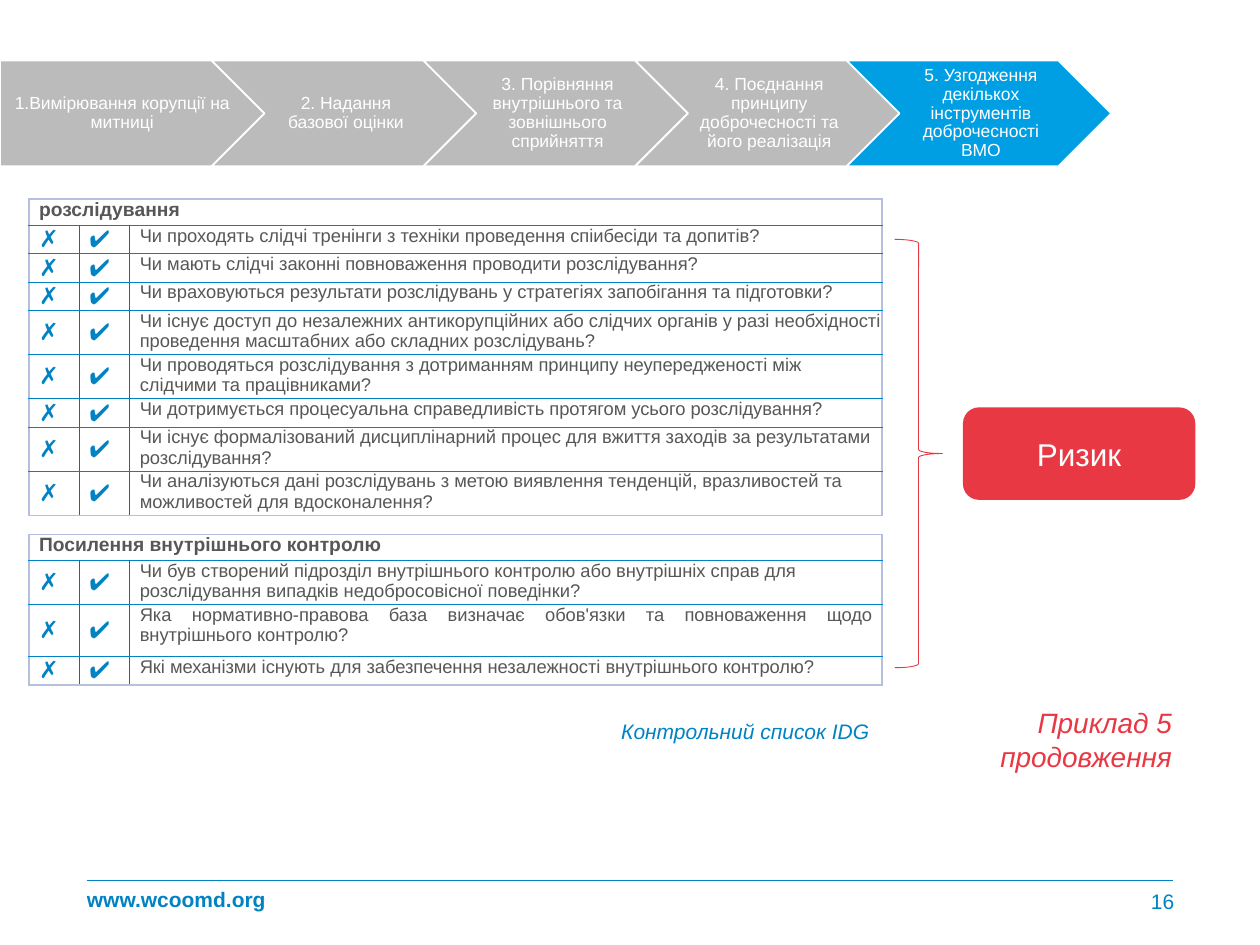
"""Build the integrity checklist slide with its process chevrons and risk callout."""
from dataclasses import dataclass

from lxml import etree
from pptx import Presentation
from pptx.dml.color import RGBColor
from pptx.enum.shapes import MSO_CONNECTOR, MSO_SHAPE
from pptx.enum.text import MSO_ANCHOR, PP_ALIGN
from pptx.oxml.ns import qn
from pptx.util import Inches, Pt

LEFT, CENTER, RIGHT, JUSTIFY = PP_ALIGN.LEFT, PP_ALIGN.CENTER, PP_ALIGN.RIGHT, PP_ALIGN.JUSTIFY
TOP, MIDDLE = MSO_ANCHOR.TOP, MSO_ANCHOR.MIDDLE
PENTAGON, CHEVRON = MSO_SHAPE.PENTAGON, MSO_SHAPE.CHEVRON
ROUNDED, BRACE = MSO_SHAPE.ROUNDED_RECTANGLE, MSO_SHAPE.RIGHT_BRACE
STRAIGHT = MSO_CONNECTOR.STRAIGHT


@dataclass(frozen=True)
class Theme:
    """Colours, type sizes and font of the slide."""
    font: str = "Arial"
    blue: str = "0082C3"
    active: str = "009FE3"
    grey: str = "BBBBBB"
    ink: str = "575756"
    frame: str = "B4C0DC"
    red: str = "E83844"
    white: str = "FFFFFF"
    step: float = 10
    question: float = 10.5
    heading: float = 11
    label: float = 12
    mark: float = 13.5
    example: float = 16
    risk: float = 18


THEME = Theme()

STEPS = [
    "1.Вимірювання корупції на митниці",
    "2. Надання базової оцінки",
    "3. Порівняння внутрішнього та зовнішнього сприйняття",
    "4. Поєднання принципу доброчесності та його реалізація",
    "5. Узгодження декількох інструментів доброчесності ВМО",
]
INVESTIGATION = [
    ("Чи проходять слідчі тренінги з техніки проведення спіибесіди та допитів?", 0.22, LEFT),
    ("Чи мають слідчі законні повноваження проводити розслідування?", 0.22, JUSTIFY),
    ("Чи враховуються результати розслідувань у стратегіях запобігання та підготовки?", 0.22, LEFT),
    ("Чи існує доступ до незалежних антикорупційних або слідчих органів у разі необхідності "
     "проведення масштабних або складних розслідувань?", 0.32, LEFT),
    ("Чи проводяться розслідування з дотриманням принципу неупередженості між слідчими "
     "та працівниками?", 0.32, LEFT),
    ("Чи дотримується процесуальна справедливість протягом усього розслідування?", 0.22, LEFT),
    ("Чи існує формалізований дисциплінарний процес для вжиття заходів за результатами "
     "розслідування?", 0.32, LEFT),
    ("Чи аналізуються дані розслідувань з метою виявлення тенденцій, вразливостей та "
     "можливостей для вдосконалення?", 0.32, LEFT),
]
CONTROL = [
    ("Чи був створений підрозділ внутрішнього контролю або внутрішніх справ для розслідування "
     "випадків недобросовісної поведінки?", 0.35, LEFT),
    ("Яка нормативно-правова база визначає обов'язки та повноваження щодо внутрішнього "
     "контролю?", 0.41, JUSTIFY),
    ("Які механізми існують для забезпечення незалежності внутрішнього контролю?", 0.22, LEFT),
]


def set_format(target, values):
    """Set each named attribute on the target."""
    for name, value in values.items():
        setattr(target, name, value)


def write(frame, lines, size, color, align=LEFT, spacing=None, **style):
    """Write one styled paragraph for each line."""
    for index, line in enumerate(lines):
        para = frame.paragraphs[0] if index == 0 else frame.add_paragraph()
        set_format(para, {"alignment": align, "line_spacing": spacing})
        span = para.add_run()
        span.text = line
        set_format(span.font, {"name": THEME.font, "size": Pt(size), **style})
        span.font.color.rgb = RGBColor.from_string(color)


def set_margins(target, margins):
    """Set left, top, right and bottom margins in inches."""
    sides = ("margin_left", "margin_top", "margin_right", "margin_bottom")
    set_format(target, {side: Inches(value) for side, value in zip(sides, margins)})


def add_text(page, area, lines, size, color, margins=(0.1, 0.05, 0.1, 0.05), anchor=TOP, **style):
    """Add a wrapped text box."""
    frame = page.shapes.add_textbox(*map(Inches, area)).text_frame
    set_format(frame, {"word_wrap": True, "vertical_anchor": anchor})
    set_margins(frame, margins)
    write(frame, lines, size, color, **style)


def add_figure(page, kind, area, fill, line, width):
    """Add a preset shape without shadow."""
    shape = page.shapes.add_shape(kind, *map(Inches, area))
    shape.shadow.inherit = False
    if fill:
        shape.fill.solid()
        shape.fill.fore_color.rgb = RGBColor.from_string(fill)
    else:
        shape.fill.background()
    shape.line.color.rgb = RGBColor.from_string(line)
    shape.line.width = Pt(width)
    set_format(shape.text_frame, {"word_wrap": True, "vertical_anchor": MIDDLE})
    return shape


def add_steps(page):
    """Add the row of process steps with the last one highlighted."""
    last = len(STEPS) - 1
    for index, label in enumerate(STEPS):
        kind = CHEVRON if index else PENTAGON
        fill = THEME.active if index == last else THEME.grey
        step = add_figure(page, kind, (1.68 * index, 0.48, 2.1, 0.84), fill, THEME.white, 1)
        set_margins(step.text_frame, (0.04 if index else 0.06, 0.03, 0.01, 0.03))
        write(step.text_frame, [label], THEME.step, THEME.white, CENTER, 0.9)


def add_border(cell, side, color, width):
    """Draw one side of a table cell."""
    line = etree.SubElement(cell._tc.get_or_add_tcPr(), qn(f"a:{side}"), w=str(Pt(width)))
    fill = etree.SubElement(line, qn("a:solidFill"))
    etree.SubElement(fill, qn("a:srgbClr"), val=color)


def style_cell(table, row, column):
    """Give a cell its borders, margins and empty fill."""
    cell = table.cell(row, column)
    outer, header = (THEME.frame, 1), (THEME.blue, 1)
    rule, divider = (THEME.blue, 0.5), (THEME.ink, 0.5)
    last_row, last_column = len(table.rows) - 1, len(table.columns) - 1
    borders = {
        "lnL": divider if column else outer,
        "lnR": outer if row == 0 or column == last_column else divider,
        "lnT": outer if row == 0 else header if row == 1 else rule,
        "lnB": header if row == 0 else outer if row == last_row else rule,
    }
    for side, (color, width) in borders.items():
        add_border(cell, side, color, width)
    cell.fill.background()
    set_margins(cell, (0, 0, 0, 0))
    cell.text_frame.paragraphs[0]._p.get_or_add_pPr().set("marL", str(Inches(0.08)))


def add_checklist(page, top, heading, questions):
    """Add a checklist table with a merged heading row."""
    widths = [0.4, 0.4, 5.97]
    heights = [0.21] + [height for _, height, _ in questions]
    area = map(Inches, (0.23, top, sum(widths), sum(heights)))
    table = page.shapes.add_table(len(heights), len(widths), *area).table
    set_format(table, {"first_row": False, "horz_banding": False})
    for column, width in zip(table.columns, widths):
        column.width = Inches(width)
    for row, height in zip(table.rows, heights):
        row.height = Inches(height)
    for row in range(len(heights)):
        for column in range(len(widths)):
            style_cell(table, row, column)
    table.cell(0, 0).merge(table.cell(0, len(widths) - 1))
    write(table.cell(0, 0).text_frame, [heading], THEME.heading, THEME.ink, bold=True)
    for row, (question, _, align) in enumerate(questions, start=1):
        for column, mark in enumerate("✗✔"):
            cell = table.cell(row, column)
            cell.vertical_anchor = MIDDLE
            write(cell.text_frame, [mark], THEME.mark, THEME.blue)
        cell = table.cell(row, 2)
        cell.margin_right = Inches(0.07 if align == JUSTIFY else 0)
        write(cell.text_frame, [question], THEME.question, THEME.ink, align)


def add_footer(page):
    """Add the footer rule, web address and page number."""
    rule = page.shapes.add_connector(STRAIGHT, *map(Inches, (0.69, 6.99, 9.31, 6.99)))
    rule.line.color.rgb = RGBColor.from_string(THEME.blue)
    rule.line.width = Pt(0.5)
    etree.SubElement(rule._element.spPr, qn("a:effectLst"))
    add_text(page, (0.69, 6.95, 1.46, 0.4), ["www.wcoomd.org"], THEME.label, THEME.blue,
             (0, 0.05, 0, 0.05), MIDDLE, spacing=0.9, bold=True)
    add_text(page, (8.68, 6.95, 0.64, 0.4), ["16"], THEME.label, THEME.blue,
             (0.1, 0.05, 0, 0.05), MIDDLE, align=RIGHT)


def main():
    """Build and save the deck."""
    deck = Presentation()
    set_format(deck, {"slide_width": Inches(10), "slide_height": Inches(7.5)})
    page = deck.slides.add_slide(deck.slide_layouts[6])
    add_footer(page)
    add_steps(page)
    risk = add_figure(page, ROUNDED, (7.65, 3.24, 1.83, 0.72), THEME.red, THEME.red, 1)
    write(risk.text_frame, ["Ризик"], THEME.risk, THEME.white, CENTER)
    add_figure(page, BRACE, (7.1, 1.9, 0.38, 3.4), None, THEME.red, 0.5)
    add_checklist(page, 1.58, "розслідування", INVESTIGATION)
    add_checklist(page, 4.24, "Посилення внутрішнього контролю", CONTROL)
    add_text(page, (6.92, 5.55, 2.48, 0.64), ["Приклад 5", "продовження"],
             THEME.example, THEME.red, align=RIGHT, italic=True)
    add_text(page, (3.84, 5.65, 3.16, 0.3), ["Контрольний список IDG"],
             THEME.label, THEME.blue, align=RIGHT, italic=True)
    deck.save("out.pptx")


if __name__ == "__main__":
    main()
